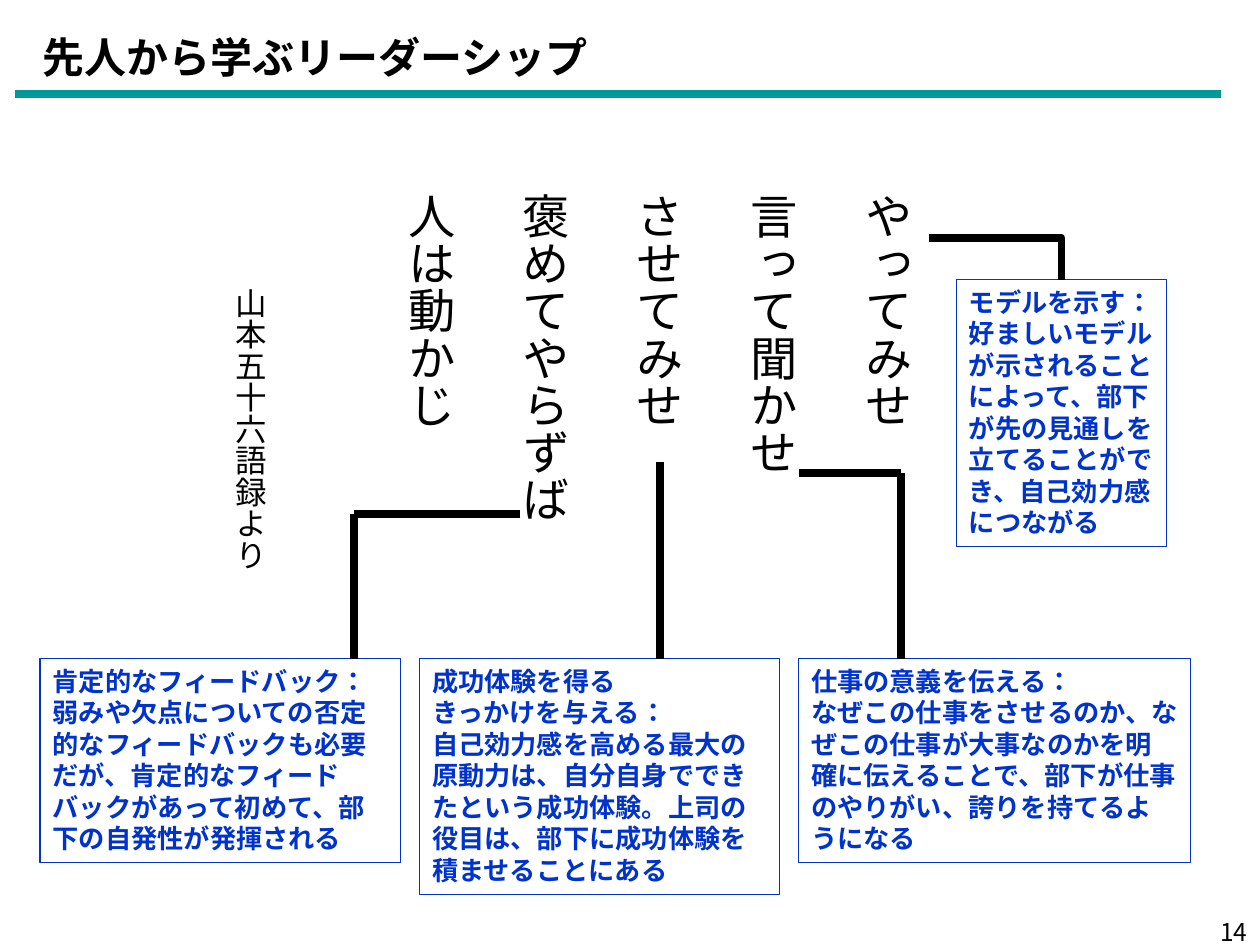
from lxml.etree import SubElement
from pptx import Presentation
from pptx.dml.color import RGBColor
from pptx.enum.lang import MSO_LANGUAGE_ID
from pptx.enum.shapes import MSO_CONNECTOR, MSO_SHAPE
from pptx.enum.text import MSO_ANCHOR, PP_ALIGN
from pptx.oxml.ns import qn
from pptx.util import Cm, Pt

BLACK = RGBColor(0x00, 0x00, 0x00)
BLUE = RGBColor(0x00, 0x33, 0xCC)
TEAL = RGBColor(0x00, 0x99, 0x99)
FONT = "Noto Sans CJK JP"


def add_paragraphs(frame, lines, color, size, bold=False, **paragraph_format):
    """Fill a text frame with one paragraph per line."""
    for index, line in enumerate(lines):
        paragraph = frame.paragraphs[0] if index == 0 else frame.add_paragraph()
        for name, value in paragraph_format.items():
            setattr(paragraph, name, value)
        run = paragraph.add_run()
        run.text = line
        font_format = {"name": FONT, "size": Pt(size), "bold": bold,
                       "language_id": MSO_LANGUAGE_ID.JAPANESE}
        for name, value in font_format.items():
            setattr(run.font, name, value)
        run.font.color.rgb = color
        SubElement(run.font._element, qn("a:ea")).set("typeface", FONT)


def add_line(start, end, color=BLACK, kind=MSO_CONNECTOR.STRAIGHT):
    """Draw a thick connector between two points in centimetres."""
    line = slide.shapes.add_connector(kind, *map(Cm, start + end))
    line.line.color.rgb = color
    line.line.width = Pt(4.5)
    SubElement(line._element.spPr, qn("a:effectLst"))
    return line


presentation = Presentation()
presentation.slide_width = Cm(25.4)
presentation.slide_height = Cm(19.05)
slide = presentation.slides.add_slide(presentation.slide_layouts[6])

# Saying in vertical columns, read from right to left
COLUMN_PITCH = 32.6
saying = slide.shapes.add_textbox(Cm(4.24), Cm(3.76), Cm(14.35), Cm(7.95)).text_frame
saying_format = {"word_wrap": True, "margin_left": Cm(0.13), "margin_right": Cm(0.13),
                 "margin_top": Cm(0.13), "margin_bottom": Cm(0.13)}
for name, value in saying_format.items():
    setattr(saying, name, value)
saying._txBody.bodyPr.set("vert", "eaVert")
add_paragraphs(saying, ["やってみせ", "言って聞かせ", "させてみせ", "褒めてやらずば",
                        "人は動かじ", "山本五十六語録より"],
               BLACK, 27, line_spacing=Pt(COLUMN_PITCH))
for column in saying.paragraphs[1:]:
    column.space_before = Pt(COLUMN_PITCH)
credit = saying.paragraphs[-1]
credit.space_before = Pt(2 * COLUMN_PITCH)
credit.runs[0].font.size = Pt(18)
credit._p.get_or_add_pPr().set("marL", str(Pt(54)))
credit._p.get_or_add_pPr().set("indent", "0")

# Explanation boxes: left, top, width, height, wrap, lines
explanations = [
    (19.28, 5.64, 4.24, 5.38, False,
     ["モデルを示す：", "好ましいモデル", "が示されること", "によって、部下",
      "が先の見通しを", "立てることがで", "き、自己効力感", "につながる"]),
    (16.1, 13.28, 7.9, 4.11, True,
     ["仕事の意義を伝える：",
      "なぜこの仕事をさせるのか、なぜこの仕事が大事なのかを明確に伝えることで、"
      "部下が仕事のやりがい、誇りを持てるようになる"]),
    (8.46, 13.28, 7.26, 4.75, True,
     ["成功体験を得る", "きっかけを与える：", "自己効力感を高める最大の",
      "原動力は、自分自身でできたという成功体験。"
      "上司の役目は、部下に成功体験を積ませることにある"]),
    (0.81, 13.28, 7.26, 4.11, True,
     ["肯定的なフィードバック：",
      "弱みや欠点についての否定的なフィードバックも必要だが、"
      "肯定的なフィードバックがあって初めて、部下の自発性が発揮される"]),
]
boxes = []
for left, top, width, height, wrap, lines in explanations:
    box = slide.shapes.add_shape(MSO_SHAPE.RECTANGLE, Cm(left), Cm(top), Cm(width), Cm(height))
    box.shadow.inherit = False
    box.fill.background()
    box.line.color.rgb = BLUE
    box.line.width = Pt(0.75)
    box.text_frame.word_wrap = wrap
    box.text_frame.vertical_anchor = MSO_ANCHOR.TOP
    add_paragraphs(box.text_frame, lines, BLUE, 15, bold=True,
                   alignment=PP_ALIGN.LEFT, line_spacing=Pt(18))
    boxes.append(box)

# Elbow from the first column to the model box
model_link = add_line((18.72, 4.8), (21.4, 5.64), kind=MSO_CONNECTOR.ELBOW)
model_link._element.spPr.find(qn("a:prstGeom")).set("prst", "bentConnector2")
model_link.end_connect(boxes[0], 0)

# Straight links from the other columns to the lower boxes
for start, end in [((16.1, 9.53), (18.16, 9.53)), ((18.16, 9.53), (18.16, 13.28)),
                   ((13.31, 9.32), (13.31, 13.28)),
                   ((10.49, 10.36), (7.14, 10.36)), ((7.14, 10.36), (7.14, 13.28))]:
    add_line(start, end)

# Page number
page_number = slide.shapes.add_textbox(Cm(20.12), Cm(18.34), Cm(5.28), Cm(0.89)).text_frame
page_number.word_wrap = True
page_number.vertical_anchor = MSO_ANCHOR.MIDDLE
add_paragraphs(page_number, ["14"], BLACK, 14, alignment=PP_ALIGN.RIGHT)

# Title and rule
title = slide.shapes.add_textbox(Cm(0.61), Cm(0.51), Cm(20.17), Cm(1.27)).text_frame
title.word_wrap = True
add_paragraphs(title, ["先人から学ぶリーダーシップ"], BLACK, 24, bold=True,
               line_spacing=Pt(28.8))
add_line((0.3, 1.9), (24.61, 1.9), TEAL)

presentation.save("out.pptx")
